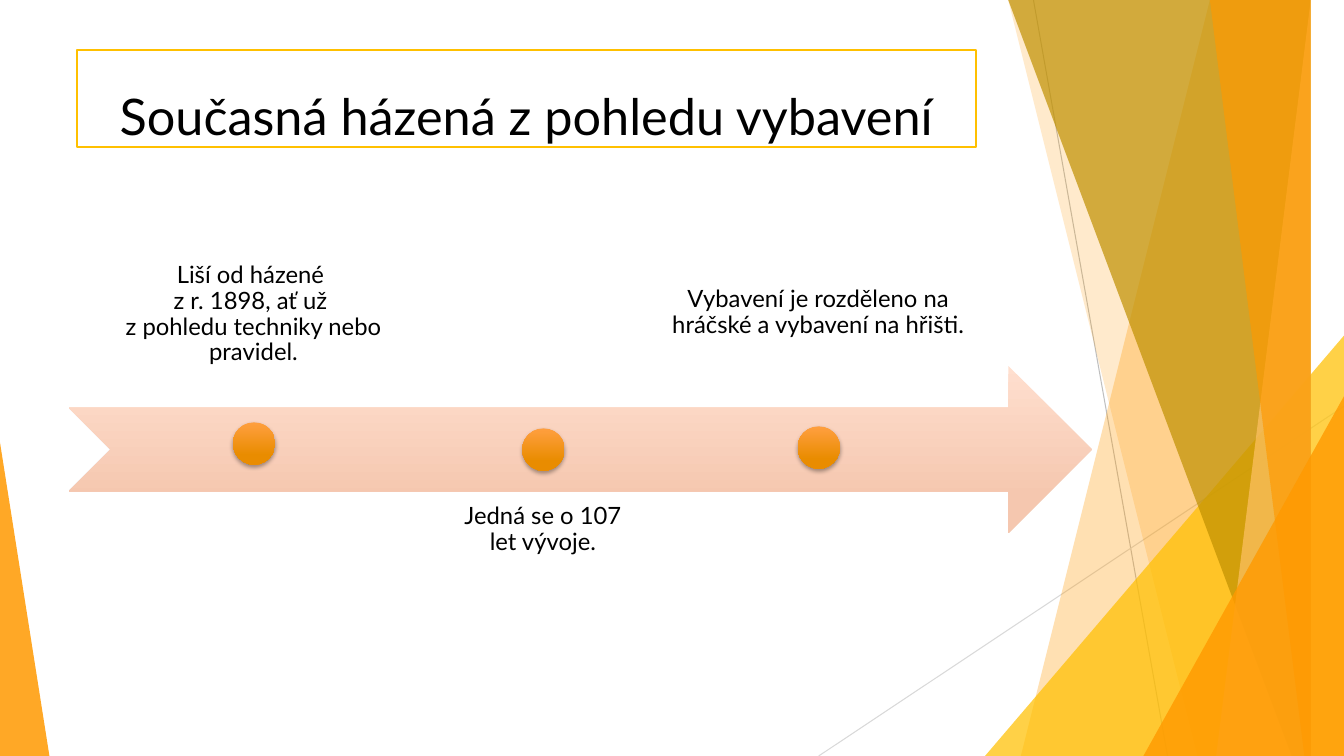
from lxml.etree import SubElement
from pptx import Presentation
from pptx.dml.color import RGBColor
from pptx.enum.shapes import MSO_CONNECTOR, MSO_SHAPE
from pptx.enum.text import MSO_ANCHOR, PP_ALIGN
from pptx.oxml.ns import qn
from pptx.util import Inches, Pt

COLUMN = ROW = Inches(1)
COLUMNS, ROWS = 13.33, 7.5
COLORS = {
    "white": "FFFFFF", "black": "000000", "orange": "FF9900",
    "gold": "FFC000", "olive": "BF9000", "apricot": "FFC266",
    "gray": "BFBFBF", "light gray": "D9D9D9",
    "arrow top": "FFDFCF", "arrow bottom": "F5C7AF",
    "dot top": "FF9F3F", "dot bottom": "E98C00",
}
FONT = "Lato"
DOT_SIZE = 0.42


def rgb(name):
    return RGBColor.from_string(COLORS[name])


def grid(left, top, width, height):
    return (round(left * COLUMN), round(top * ROW),
            round(width * COLUMN), round(height * ROW))


def paint(shape, color, opacity=100):
    shape.shadow.inherit = False
    shape.line.fill.background()
    shape.fill.solid()
    shape.fill.fore_color.rgb = rgb(color)
    if opacity < 100:
        tone = shape._element.spPr.find(".//" + qn("a:srgbClr"))
        SubElement(tone, qn("a:alpha"), val=str(opacity * 1000))


def paint_gradient(shape, top, bottom):
    shape.shadow.inherit = False
    shape.line.fill.background()
    shape.fill.gradient()
    shape.fill.gradient_angle = 270
    for stop, color, position in zip(shape.fill.gradient_stops, (top, bottom), (0, 0.78)):
        stop.color.rgb = rgb(color)
        stop.position = position


def add_ray(slide, start, end, color):
    ray = slide.shapes.add_connector(
        MSO_CONNECTOR.STRAIGHT, *grid(*start, *end))
    ray.line.color.rgb = rgb(color)
    ray.line.width = Pt(0.75)
    SubElement(ray._element.spPr, qn("a:effectLst"))


def add_band(slide, top_left, bottom_left, color, opacity):
    outline = slide.shapes.build_freeform(top_left, 0, scale=COLUMN)
    outline.add_line_segments(
        [(COLUMNS, 0), (COLUMNS, ROWS), (bottom_left, ROWS)], close=True)
    paint(outline.convert_to_shape(), color, opacity)


def add_corner(slide, left, width, height, color, opacity, apex):
    corner = slide.shapes.add_shape(
        MSO_SHAPE.ISOSCELES_TRIANGLE, *grid(left, ROWS - height, width, height))
    corner.adjustments[0] = apex
    paint(corner, color, opacity)


def write(shape, text, size, spacing, anchor=MSO_ANCHOR.TOP, inset=None):
    frame = shape.text_frame
    frame.word_wrap = True
    frame.vertical_anchor = anchor
    if inset is not None:
        frame.margin_left = frame.margin_right = Inches(inset)
        frame.margin_top = frame.margin_bottom = Inches(inset)
    paragraph = frame.paragraphs[0]
    paragraph.text = text
    paragraph.alignment = PP_ALIGN.CENTER
    paragraph.line_spacing = spacing
    for run in paragraph.runs:
        run.font.name = FONT
        run.font.size = Pt(size)
        run.font.color.rgb = rgb("black")


def add_title(slide, text):
    title = slide.shapes.add_shape(MSO_SHAPE.RECTANGLE, *grid(0.76, 0.5, 8.92, 0.96))
    paint(title, "white")
    title.line.color.rgb = rgb("gold")
    title.line.width = Pt(1.5)
    write(title, text, size=36, spacing=1.5)


def add_timeline_arrow(slide):
    arrow = slide.shapes.add_shape(
        MSO_SHAPE.NOTCHED_RIGHT_ARROW, *grid(0.68, 3.63, 10.15, 1.66))
    paint_gradient(arrow, "arrow top", "arrow bottom")


def add_dot(slide, left, top):
    dot = slide.shapes.add_shape(MSO_SHAPE.OVAL, *grid(left, top, DOT_SIZE, DOT_SIZE))
    paint_gradient(dot, "dot top", "dot bottom")
    effects = dot._element.spPr.find(qn("a:effectLst"))
    shadow = SubElement(effects, qn("a:outerShdw"), blurRad=str(Pt(3)),
                        dist=str(Pt(2)), dir="5400000", rotWithShape="0")
    tone = SubElement(shadow, qn("a:srgbClr"), val=COLORS["black"])
    SubElement(tone, qn("a:alpha"), val="35000")


def add_milestone(slide, text, area, anchor, dot):
    caption = slide.shapes.add_textbox(*grid(*area))
    write(caption, text, size=17, spacing=0.9, anchor=anchor, inset=0.13)
    add_dot(slide, *dot)


def add_backdrop(slide):
    add_ray(slide, (10.25, 0), (11.58, ROWS), "gray")
    add_ray(slide, (COLUMNS, 4.03), (8.12, ROWS), "light gray")
    add_band(slide, 12.28, 10.04, "orange", 30)
    add_band(slide, 10.5, 11.83, "orange", 20)
    add_corner(slide, 9.77, 3.56, 4.17, "gold", 72, apex=1)
    add_band(slide, 10.21, 12.91, "olive", 70)
    add_band(slide, 13.03, 11.92, "apricot", 70)
    add_band(slide, 11.96, 13.18, "orange", 65)
    add_corner(slide, 11.34, 1.99, 3.57, "orange", 80, apex=1)
    add_corner(slide, 0, 0.49, 3.11, "orange", 85, apex=0)


def main():
    deck = Presentation()
    deck.slide_width = round(COLUMNS * COLUMN)
    deck.slide_height = round(ROWS * ROW)
    slide = deck.slides.add_slide(deck.slide_layouts[6])
    add_backdrop(slide)
    add_title(slide, "Současná házená z pohledu vybavení")
    add_timeline_arrow(slide)
    milestones = [
        ("Liší od házené \nz r. 1898, ať už \nz pohledu techniky nebo pravidel.",
         (0.68, 2.47, 3.67, 1.29), MSO_ANCHOR.BOTTOM, (2.31, 4.19)),
        ("Jedná se o 107 let vývoje.",
         (4.45, 4.87, 1.87, 1.66), MSO_ANCHOR.TOP, (5.18, 4.25)),
        ("Vybavení je rozděleno na hráčské a vybavení na hřišti.",
         (6.41, 2.56, 3.41, 0.93), MSO_ANCHOR.BOTTOM, (7.91, 4.23)),
    ]
    for milestone in milestones:
        add_milestone(slide, *milestone)
    deck.save("out.pptx")


if __name__ == "__main__":
    main()
